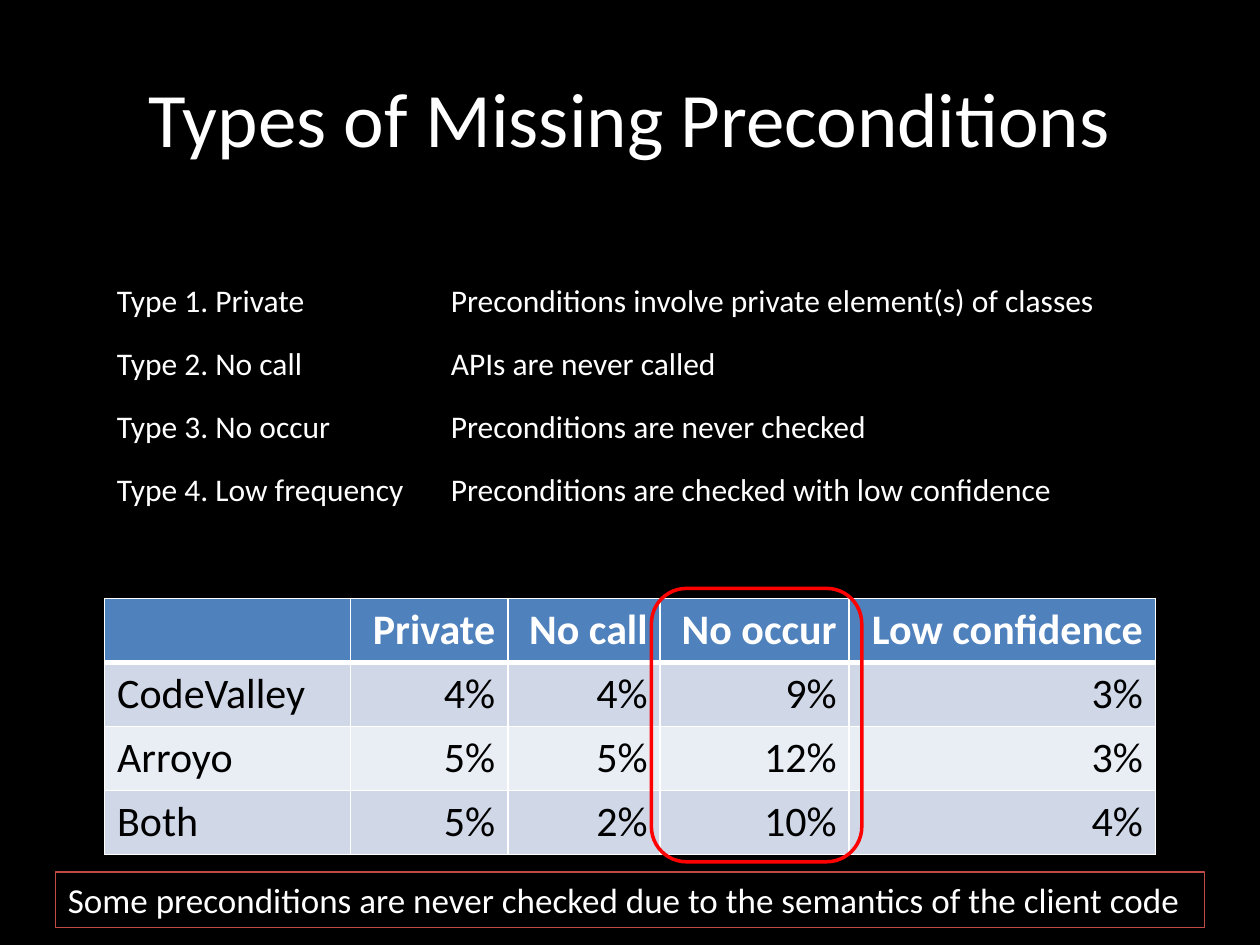
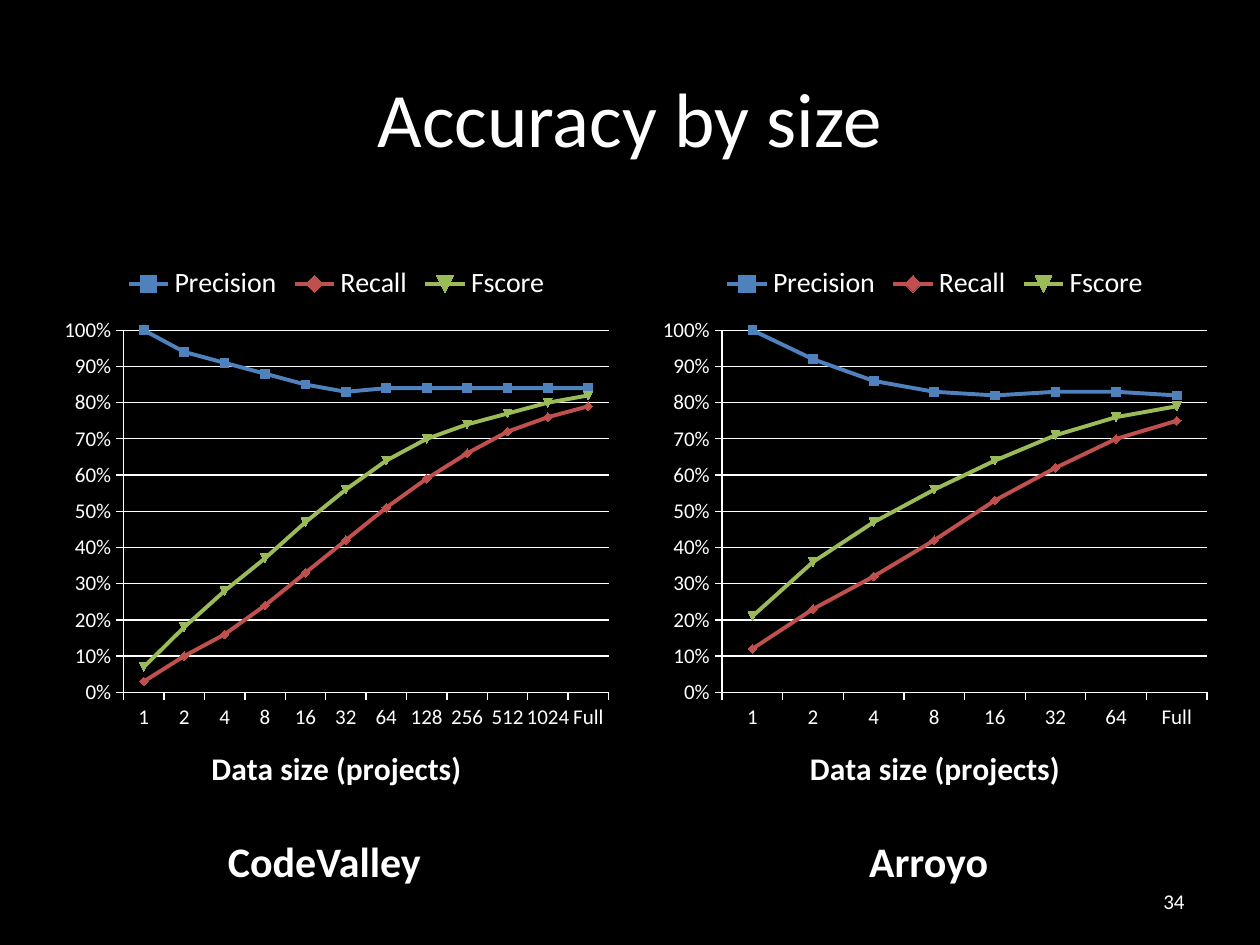
import pptx
import pptx.chart.data
import pptx.dml.color
import pptx.enum.chart
import pptx.enum.shapes
import pptx.enum.text
import pptx.oxml
import pptx.oxml.ns
import pptx.util

Inches, Pt = pptx.util.Inches, pptx.util.Pt
ALIGN = pptx.enum.text.PP_ALIGN
ANCHOR = pptx.enum.text.MSO_ANCHOR
SHAPE = pptx.enum.shapes.MSO_SHAPE

FONT = "Calibri"
HEX = {
    "black": "000000", "white": "FFFFFF", "red": "FF0000", "note": "BF4C48",
    "header": "4F81BD", "band": "D0D8E8", "light": "E9EDF4",
    "Precision": "4F81BD", "Recall": "C0504D", "Fscore": "9BBB59",
}
COLOR = {name: pptx.dml.color.RGBColor.from_string(value) for name, value in HEX.items()}
HOSTS = ["CodeValley", "Arroyo"]


def style_font(font, size, color="white", bold=False):
    for key, value in {"name": FONT, "size": Pt(size), "bold": bold}.items():
        setattr(font, key, value)
    font.color.rgb = COLOR[color]


def write(frame, text, size, color="white", bold=False, align=ALIGN.LEFT, **frame_format):
    for key, value in frame_format.items():
        setattr(frame, key, value)
    para = frame.paragraphs[0]
    para.alignment = align
    span = para.add_run()
    span.text = text
    style_font(span.font, size, color, bold)


# Shared setup: slide size, black background, titles
deck = pptx.Presentation()
deck.slide_width, deck.slide_height = Inches(10), Inches(7.5)
background = deck.slide_master.background.fill
background.solid()
background.fore_color.rgb = COLOR["black"]

pages = []
for heading in ["Types of Missing Preconditions", "Accuracy by size"]:
    page = deck.slides.add_slide(deck.slide_layouts[5])
    title = page.shapes.title
    place = {"left": 0.5, "top": 0.3, "width": 9, "height": 1.25}
    for key, value in place.items():
        setattr(title, key, Inches(value))
    write(title.text_frame, heading, 44, align=ALIGN.CENTER, vertical_anchor=ANCHOR.MIDDLE)
    pages.append(page)
types_page, accuracy_page = pages

# Definitions of the four types: label and meaning, each with its width
definitions = [
    ("Type 1. Private", 1.72, "Preconditions involve private element(s) of classes", 5.37),
    ("Type 2. No call", 1.69, "APIs are never called", 2.33),
    ("Type 3. No occur", 1.92, "Preconditions are never checked", 3.54),
    ("Type 4. Low frequency", 2.51, "Preconditions are checked with low confidence", 5.03),
]
for index, (label, label_width, meaning, meaning_width) in enumerate(definitions):
    top = Inches(2.18 + 0.5 * index)
    for left, width, text in [(0.83, label_width, label), (3.48, meaning_width, meaning)]:
        box = types_page.shapes.add_textbox(Inches(left), top, Inches(width), Inches(0.4))
        write(box.text_frame, text, 18, word_wrap=False)

# Table of shares by type
rows = [
    ["", "Private", "No call", "No occur", "Low confidence"],
    [HOSTS[0], "4%", "4%", "9%", "3%"],
    [HOSTS[1], "5%", "5%", "12%", "3%"],
    ["Both", "5%", "2%", "10%", "4%"],
]
widths = [1.95, 1.25, 1.21, 1.5, 2.43]
table = types_page.shapes.add_table(
    len(rows), len(widths), Inches(0.83), Inches(4.75), Inches(sum(widths)), Inches(2.03)).table
for column, width in zip(table.columns, widths):
    column.width = Inches(width)
for row_index, row in enumerate(rows):
    is_header = row_index == 0
    fill_name = "header" if is_header else ("band" if row_index % 2 else "light")
    for column_index, text in enumerate(row):
        cell = table.cell(row_index, column_index)
        cell.fill.solid()
        cell.fill.fore_color.rgb = COLOR[fill_name]
        write(cell.text_frame, text, 24, "white" if is_header else "black", is_header,
              ALIGN.RIGHT if column_index else ALIGN.LEFT)
        # Borders: thin white, thick between header and body
        thick = {"lnB": is_header, "lnT": row_index == 1}
        properties = cell._tc.get_or_add_tcPr()
        for position, side in enumerate(["lnL", "lnR", "lnT", "lnB"]):
            border = pptx.oxml.parse_xml(
                f'<a:{side} {pptx.oxml.ns.nsdecls("a")} w="{Pt(3 if thick.get(side) else 1)}">'
                f'<a:solidFill><a:srgbClr val="{HEX["white"]}"/></a:solidFill></a:{side}>')
            properties.insert(position, border)

# Outline around the "No occur" column, and the note below the table
outlines = [
    (SHAPE.ROUNDED_RECTANGLE, (5.17, 4.67, 1.67, 2.17), "red", 2),
    (SHAPE.RECTANGLE, (0.44, 6.92, 9.12, 0.44), "note", 0.75),
]
for kind, place, color, weight in outlines:
    box = types_page.shapes.add_shape(kind, *map(Inches, place))
    box.shadow.inherit = False
    box.fill.background()
    box.line.color.rgb = COLOR[color]
    box.line.width = Pt(weight)
write(box.text_frame,
      "Some preconditions are never checked due to the semantics of the client code",
      20, word_wrap=False)

# Accuracy charts with captions
sizes = ["1", "2", "4", "8", "16", "32", "64", "128", "256", "512", "1024"]
charts = [
    {"name": HOSTS[0], "left": 0.42, "caption": (1.71, 1.92), "sizes": sizes + ["Full"],
     "series": {
         "Precision": [1, .94, .91, .88, .85, .83, .84, .84, .84, .84, .84, .84],
         "Recall": [.03, .1, .16, .24, .33, .42, .51, .59, .66, .72, .76, .79],
         "Fscore": [.07, .18, .28, .37, .47, .56, .64, .7, .74, .77, .8, .82]}},
    {"name": HOSTS[1], "left": 5.17, "caption": (6.8, 1.24), "sizes": sizes[:7] + ["Full"],
     "series": {
         "Precision": [1, .92, .86, .83, .82, .83, .83, .82],
         "Recall": [.12, .23, .32, .42, .53, .62, .7, .75],
         "Fscore": [.21, .36, .47, .56, .64, .71, .76, .79]}},
]
for entry in charts:
    data = pptx.chart.data.CategoryChartData(number_format="0%")
    data.categories = entry["sizes"]
    for name, values in entry["series"].items():
        data.add_series(name, values)
    chart = accuracy_page.shapes.add_chart(
        pptx.enum.chart.XL_CHART_TYPE.LINE_MARKERS,
        Inches(entry["left"]), Inches(2), Inches(4.5), Inches(4.5), data).chart
    style_font(chart.font, 12)
    chart.has_title = False
    chart.has_legend = True
    chart.legend.position = pptx.enum.chart.XL_LEGEND_POSITION.TOP
    chart.legend.include_in_layout = False
    style_font(chart.legend.font, 16)

    # Axes
    write(chart.category_axis.axis_title.text_frame, "Data size (projects)", 18, bold=True,
          align=ALIGN.CENTER)
    scale = {"minimum_scale": 0, "maximum_scale": 1, "major_unit": 0.1,
             "has_major_gridlines": True}
    for key, value in scale.items():
        setattr(chart.value_axis, key, value)
    chart.value_axis.tick_labels.number_format = "0%"
    chart.value_axis.tick_labels.number_format_is_linked = False
    for axis in [chart.category_axis, chart.value_axis]:
        axis.major_tick_mark = pptx.enum.chart.XL_TICK_MARK.OUTSIDE
    for part in [chart.category_axis, chart.value_axis, chart.value_axis.major_gridlines]:
        part.format.line.color.rgb = COLOR["white"]
        part.format.line.width = Pt(0.75)

    # Series
    plot = chart.plots[0]
    plot.vary_by_categories = False
    for series in plot.series:
        series.smooth = False
        series.format.line.color.rgb = COLOR[series.name]
        series.format.line.width = Pt(2.25)
        series.marker.format.fill.solid()
        series.marker.format.fill.fore_color.rgb = COLOR[series.name]
        series.marker.format.line.color.rgb = COLOR[series.name]

    left, width = entry["caption"]
    box = accuracy_page.shapes.add_textbox(Inches(left), Inches(6.58), Inches(width), Inches(0.5))
    write(box.text_frame, entry["name"], 24, bold=True, word_wrap=False)

# Slide number
box = accuracy_page.shapes.add_textbox(Inches(7.17), Inches(6.95), Inches(2.33), Inches(0.4))
write(box.text_frame, "34", 12, align=ALIGN.RIGHT, word_wrap=True, vertical_anchor=ANCHOR.MIDDLE)

deck.save("out.pptx")
